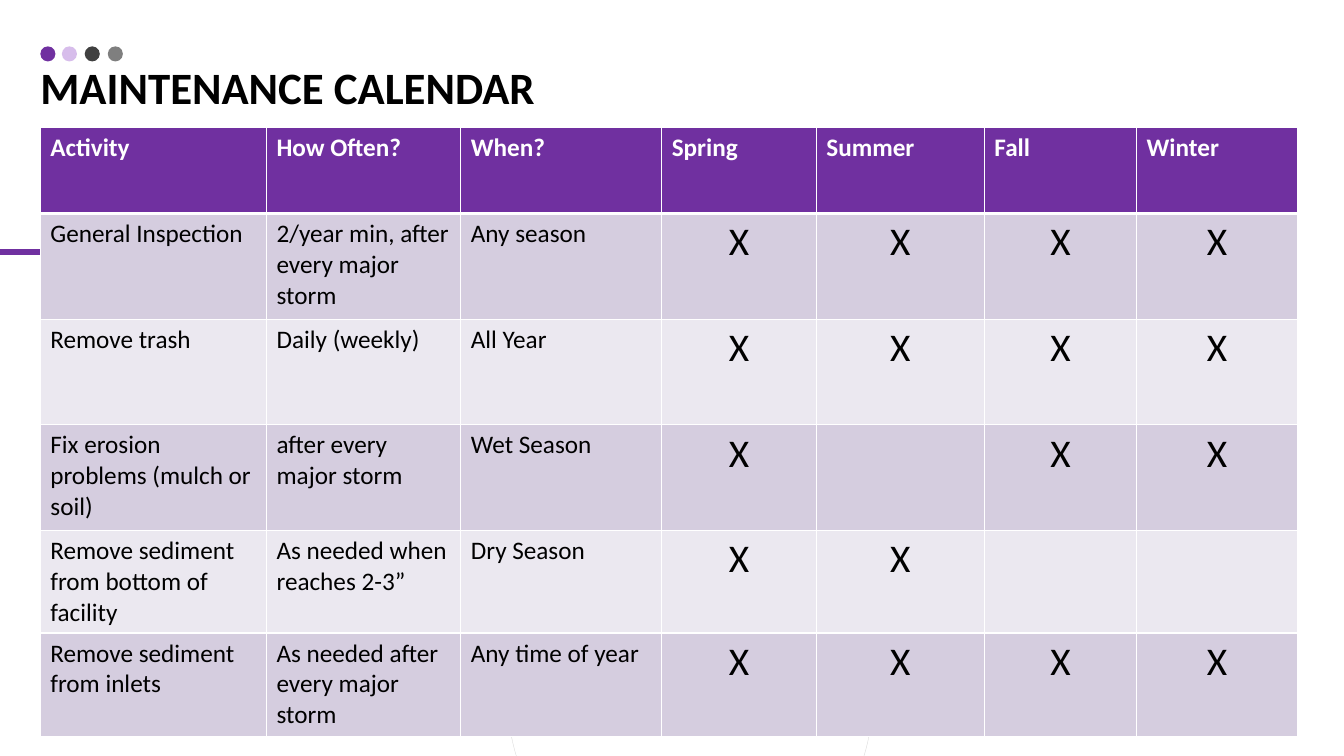
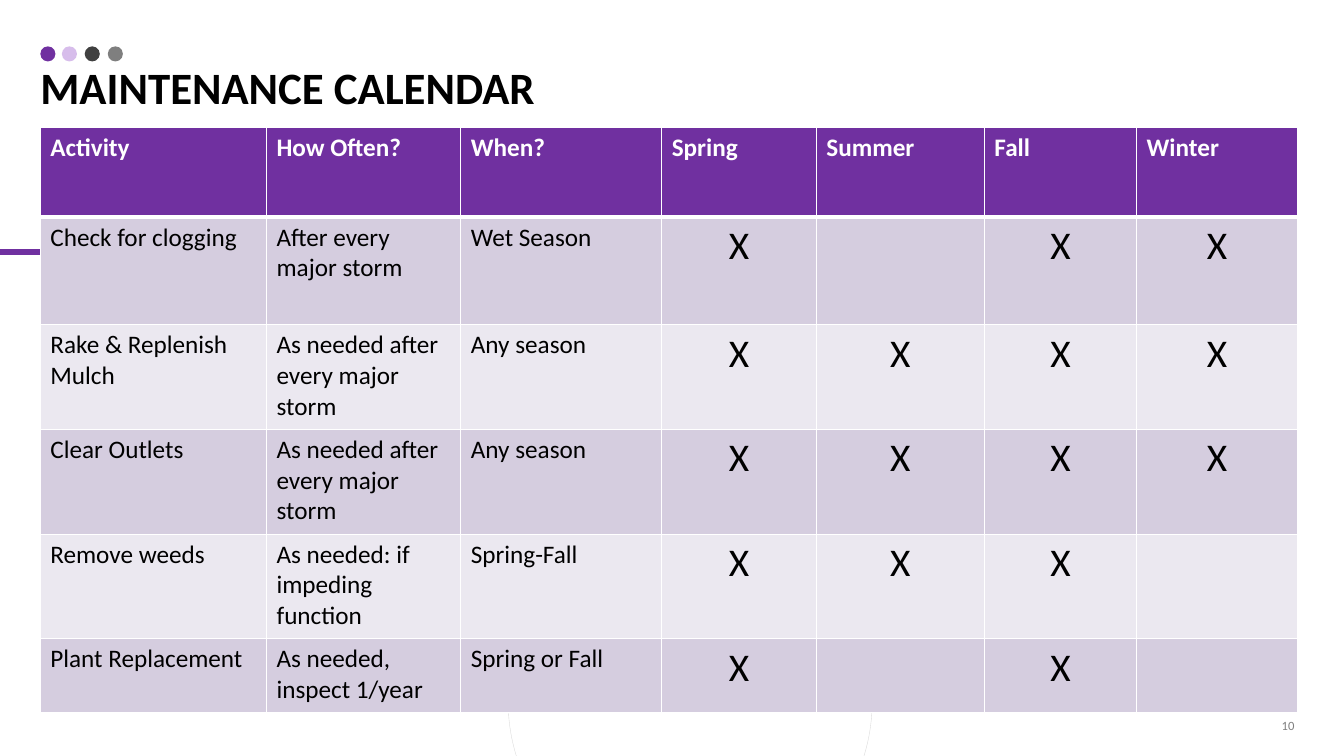
import pptx
import pptx.util
import pptx.dml.color
import pptx.enum.shapes
import pptx.enum.text
import pptx.oxml.ns
import pptx.oxml.xmlchemy
from dataclasses import dataclass

Pt = pptx.util.Pt
Shape = pptx.enum.shapes.MSO_SHAPE
Align = pptx.enum.text.PP_ALIGN
Anchor = pptx.enum.text.MSO_ANCHOR
qn = pptx.oxml.ns.qn
node = pptx.oxml.xmlchemy.OxmlElement


@dataclass(frozen=True)
class Theme:
    font: str = "Calibri"
    main: str = "7030A0"
    pale: str = "C7A2E3"
    dark: str = "404040"
    gray: str = "7F7F7F"
    ring: str = "D9D9D9"
    ink: str = "000000"
    white: str = "FFFFFF"
    bands: tuple = ("D5CDDF", "EBE8F0")
    title: int = 32
    mark: int = 28
    body: int = 18
    small: int = 9


def color(code):
    return pptx.dml.color.RGBColor.from_string(code)


class Deck:
    def __init__(self, theme):
        self.theme = theme
        self.prs = pptx.Presentation()
        self.prs.slide_width = Pt(960)
        self.prs.slide_height = Pt(540)
        self.slide = None

    def start(self):
        self.slide = self.prs.slides.add_slide(self.prs.slide_layouts[6])

    def style(self, frame, size, code, bold=False, align=Align.LEFT):
        for para in frame.paragraphs:
            para.alignment = align
            for run in para.runs:
                run.font.name = self.theme.font
                run.font.size = Pt(size)
                run.font.bold = bold
                run.font.color.rgb = color(code)

    def text(self, words, left, top, width, height, size, code,
             bold=False, align=Align.LEFT, anchor=Anchor.MIDDLE, inset=0):
        box = self.slide.shapes.add_textbox(Pt(left), Pt(top), Pt(width), Pt(height))
        frame = box.text_frame
        frame.word_wrap = True
        frame.vertical_anchor = anchor
        frame.margin_left = frame.margin_right = Pt(inset)
        frame.margin_top = frame.margin_bottom = Pt(0)
        frame.text = words
        frame.paragraphs[0].line_spacing = 0.9
        self.style(frame, size, code, bold, align)

    def disc(self, left, top, size, fill=None, line=None, alpha=100):
        disc = self.slide.shapes.add_shape(
            Shape.OVAL, Pt(left), Pt(top), Pt(size), Pt(size))
        disc.shadow.inherit = False
        if fill:
            disc.fill.solid()
            disc.fill.fore_color.rgb = color(fill)
        else:
            disc.fill.background()
        if line:
            disc.line.color.rgb = color(line)
            disc.line.width = Pt(0.25)
        else:
            disc.line.fill.background()
        if alpha < 100:
            tint = disc.element.spPr.find(qn("a:solidFill")).find(qn("a:srgbClr"))
            fade = node("a:alpha")
            fade.set("val", str(alpha * 1000))
            tint.append(fade)

    def rule(self, left, right, top):
        rule = self.slide.shapes.add_connector(
            pptx.enum.shapes.MSO_CONNECTOR.STRAIGHT, Pt(left), Pt(top), Pt(right), Pt(top))
        rule.line.color.rgb = color(self.theme.main)
        rule.line.width = Pt(4.5)
        rule.element.spPr.append(node("a:effectLst"))

    def edge(self, cell, side, width):
        line = node("a:ln" + side)
        line.set("w", str(int(Pt(width))))
        fill = node("a:solidFill")
        tint = node("a:srgbClr")
        tint.set("val", self.theme.white)
        fill.append(tint)
        line.append(fill)
        cell.get_or_add_tcPr().append(line)

    def cell(self, cell, words, row):
        theme = self.theme
        widths = {"L": 1, "R": 1, "T": 3 if row == 1 else 1, "B": 3 if row == 0 else 1}
        for side, width in widths.items():
            self.edge(cell._tc, side, width)
        cell.fill.solid()
        cell.fill.fore_color.rgb = color(theme.bands[(row - 1) % 2] if row else theme.main)
        cell.text_frame.text = words
        if row == 0:
            self.style(cell.text_frame, theme.body, theme.white, bold=True)
        elif words == "X":
            self.style(cell.text_frame, theme.mark, theme.ink, align=Align.CENTER)
        else:
            self.style(cell.text_frame, theme.body, theme.ink)

    def table(self, rows, left, top, widths, heights):
        shape = self.slide.shapes.add_table(
            len(rows), len(widths), Pt(left), Pt(top), Pt(sum(widths)), Pt(sum(heights)))
        table = shape.table
        for col, width in zip(table.columns, widths):
            col.width = Pt(width)
        for r, (row, height) in enumerate(zip(rows, heights)):
            table.rows[r].height = Pt(height)
            for c, words in enumerate(row):
                self.cell(table.cell(r, c), words, r)

    def frame(self, title):
        theme = self.theme
        self.start()
        self.rule(0, 133, 180)
        dots = ((28.8, theme.main, 100), (44.2, theme.pale, 70),
                (60.5, theme.dark, 100), (77, theme.gray, 100))
        for left, fill, alpha in dots:
            self.disc(left, 33.1, 10.8, fill=fill, alpha=alpha)
        self.disc(363, 371.5, 260, line=theme.ring)
        self.text(title, 28.8, 24, 791, 57.4, theme.title, theme.ink,
                  bold=True, anchor=Anchor.BOTTOM)

    def number(self, words):
        self.text(words, 715.7, 509, 216, 19.4, self.theme.small, self.theme.gray,
                  align=Align.RIGHT, inset=7.2)


HEAD = ("Activity", "How Often?", "When?", "Spring", "Summer", "Fall", "Winter")
WIDTHS = (161.6, 138.8, 143.5, 110.5, 120, 108.7, 115)

PAGES = (
    ("", (61.5, 75.5, 75.5, 75.5, 73.2, 73.8), (
        ("General Inspection", "2/year min, after every major storm", "Any season", "XXXX"),
        ("Remove trash", "Daily (weekly)", "All Year", "XXXX"),
        ("Fix erosion problems (mulch or soil)", "after every major storm", "Wet Season", "X-XX"),
        ("Remove sediment from bottom of facility", "As needed when reaches 2-3”",
         "Dry Season", "XX--"),
        ("Remove sediment from inlets", "As needed after every major storm",
         "Any time of year", "XXXX"),
    )),
    ("10", (64, 77, 74.8, 74.8, 74.8, 52.5), (
        ("Check for clogging", "After every major storm", "Wet Season", "X-XX"),
        ("Rake & Replenish Mulch", "As needed after every major storm", "Any season", "XXXX"),
        ("Clear Outlets", "As needed after every major storm", "Any season", "XXXX"),
        ("Remove weeds", "As needed: if impeding function", "Spring-Fall", "XXX-"),
        ("Plant Replacement", "As needed, inspect 1/year", "Spring or Fall", "X-X-"),
    )),
)


def main():
    deck = Deck(Theme())
    for number, heights, tasks in PAGES:
        deck.frame("MAINTENANCE CALENDAR")
        if number:
            deck.number(number)
        rows = [HEAD]
        for *words, marks in tasks:
            rows.append((*words, *("X" if mark == "X" else "" for mark in marks)))
        deck.table(rows, 28.8, 91, WIDTHS, heights)
    deck.prs.save("out.pptx")


if __name__ == "__main__":
    main()
